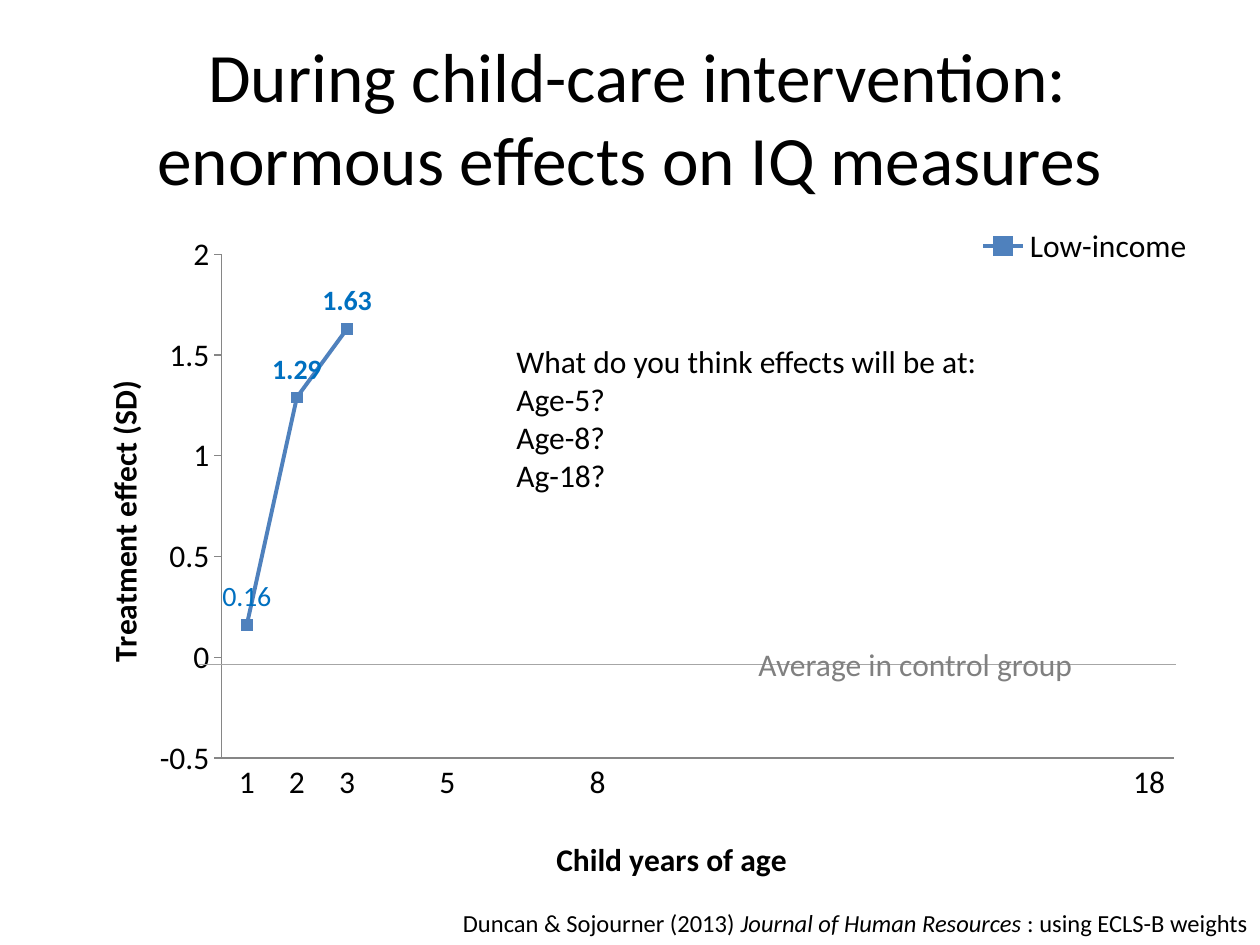
"""Build a slide charting child-care intervention effects on IQ measures."""
from dataclasses import dataclass

from lxml import etree
from pptx import Presentation
from pptx import util as u
from pptx.chart import data as cd
from pptx.dml.color import RGBColor
from pptx.enum import chart as ce
from pptx.enum import shapes, text
from pptx.oxml import ns

FONT = "Calibri"
BLACK, GREY, RULE, AXIS = "000000", "808080", "A6A6A6", "868686"
SERIES, LABEL = "4F81BD", "0070C0"
EFFECTS = {1: 0.16, 2: 1.29, 3: 1.63}
AGE_LABELS = {0: "1", 1: "2", 2: "3", 4: "5", 7: "8", 18: "18"}
SLOTS = 19


@dataclass
class Note:
    box: tuple[float, float, float, float]
    lines: list[str]
    size: float = 18
    color: str = BLACK
    align: text.PP_ALIGN = text.PP_ALIGN.LEFT
    anchor: text.MSO_ANCHOR = text.MSO_ANCHOR.TOP


TITLE = Note((1.27, 0.76, 22.86, 3.18),
             [" During child-care intervention:\venormous effects on IQ measures"],
             39.6, align=text.PP_ALIGN.CENTER, anchor=text.MSO_ANCHOR.MIDDLE)
SOURCE = Note((8.46, 18.19, 16.94, 0.86), [""], 14, align=text.PP_ALIGN.RIGHT)
SOURCE_RUNS = [("Duncan & Sojourner (2013) ", False),
               ("Journal of Human Resources ", True),
               (": using ECLS-B weights", False)]
CONTROL = Note((15.04, 12.88, 7.62, 1.02), ["Average in control group"], color=GREY)
QUESTION = Note((10.16, 6.78, 11.86, 3.33),
                ["What do you think effects will be at:", "Age-5?", "Age-8?", "Ag-18?"])


def rgb(color: str) -> RGBColor:
    return RGBColor.from_string(color)


def style(font, size: float, color: str, bold: bool = False) -> None:
    font.name, font.size, font.bold = FONT, u.Pt(size), bold
    font.color.rgb = rgb(color)


def add_note(parent, note: Note):
    tf = parent.add_textbox(*map(u.Cm, note.box)).text_frame
    tf.word_wrap = True
    tf.vertical_anchor = note.anchor
    tf.text = "\n".join(note.lines)
    for p in tf.paragraphs:
        p.alignment = note.align
        style(p.font, note.size, note.color)
    return tf


def place(element, **fractions: float) -> None:
    for old in element.findall(ns.qn("c:layout")):
        element.remove(old)
    layout = etree.Element(ns.qn("c:layout"))
    manual = etree.SubElement(layout, ns.qn("c:manualLayout"))
    values = {"xMode": "edge", "yMode": "edge", **fractions}
    if "w" in fractions:
        values = {"layoutTarget": "inner", **values}
    for tag, value in values.items():
        etree.SubElement(manual, ns.qn(f"c:{tag}")).set("val", str(value))
    element.insert(0 if element.find(ns.qn("c:tx")) is None else 1, layout)


def style_axis(axis, title: str, x: float, y: float, tick: ce.XL_TICK_MARK) -> None:
    axis.has_major_gridlines = False
    axis.major_tick_mark, axis.minor_tick_mark = tick, ce.XL_TICK_MARK.NONE
    axis.format.line.color.rgb = rgb(AXIS)
    style(axis.tick_labels.font, 18, BLACK)
    tf = axis.axis_title.text_frame
    tf.text = title
    style(tf.paragraphs[0].font, 18, BLACK, bold=True)
    place(axis.axis_title.element, x=x, y=y)


def style_series(series) -> None:
    series.smooth = False
    series.format.line.color.rgb = rgb(SERIES)
    series.format.line.width = u.Pt(2.25)
    series.marker.style, series.marker.size = ce.XL_MARKER_STYLE.SQUARE, 6
    for part in (series.marker.format.fill, series.marker.format.line.fill):
        part.solid()
        part.fore_color.rgb = rgb(SERIES)
    labels = series.data_labels
    labels.show_value = True
    labels.number_format, labels.number_format_is_linked = "#,##0.00", False
    labels.position = ce.XL_LABEL_POSITION.ABOVE
    style(labels.font, 16, LABEL)
    for i in (1, 2):
        label = series.points[i].data_label
        style(label.font, 16, LABEL, bold=True)
        label.position = ce.XL_LABEL_POSITION.ABOVE


def add_effect_chart(s) -> None:
    data = cd.CategoryChartData(number_format="General")
    data.categories = [AGE_LABELS.get(i, "") for i in range(SLOTS)]
    data.add_series("Low-income", [EFFECTS.get(i + 1) for i in range(SLOTS)])
    box = map(u.Cm, (1.27, 4.45, 22.86, 13.54))
    chart = s.shapes.add_chart(ce.XL_CHART_TYPE.LINE_MARKERS, *box, data).chart
    style(chart.font, 18, BLACK)
    chart.has_title = False
    chart.has_legend = True
    chart.legend.position = ce.XL_LEGEND_POSITION.CORNER
    chart.legend.include_in_layout = True
    style(chart.legend.font, 18, BLACK)
    chart.plots[0].vary_by_categories = False
    place(chart.element.find(".//" + ns.qn("c:plotArea")), x=0.14, y=0.05, w=0.84, h=0.75)
    style_axis(chart.category_axis, "Child years of age", 0.43, 0.91, ce.XL_TICK_MARK.NONE)
    axis = chart.value_axis
    style_axis(axis, "Treatment effect (SD)", 0.03, 0.23, ce.XL_TICK_MARK.OUTSIDE)
    axis.axis_title.element.find(".//" + ns.qn("a:bodyPr")).set("rot", "-5400000")
    axis.minimum_scale, axis.maximum_scale, axis.major_unit = -0.5, 2, 0.5
    axis.crosses = ce.XL_AXIS_CROSSES.MINIMUM
    axis.tick_labels.number_format = "General"
    axis.tick_labels.number_format_is_linked = False
    style_series(chart.plots[0].series[0])


def add_control_line(s) -> None:
    group = s.shapes.add_group_shape().shapes
    ends = map(u.Cm, (4.01, 13.39, 23.7, 13.39))
    line = group.add_connector(shapes.MSO_CONNECTOR.STRAIGHT, *ends)
    line.line.color.rgb = rgb(RULE)
    line.line.width = u.Pt(0.75)
    etree.SubElement(line.element.spPr, ns.qn("a:effectLst"))
    add_note(group, CONTROL)


def main() -> None:
    prs = Presentation()
    prs.slide_width, prs.slide_height = u.Cm(25.4), u.Cm(19.05)
    s = prs.slides.add_slide(prs.slide_layouts[6])
    add_note(s.shapes, TITLE)
    add_effect_chart(s)
    p = add_note(s.shapes, SOURCE).paragraphs[0]
    for words, italic in SOURCE_RUNS:
        r = p.add_run()
        r.text, r.font.italic = words, italic
    add_control_line(s)
    add_note(s.shapes, QUESTION)
    prs.save("out.pptx")


if __name__ == "__main__":
    main()
